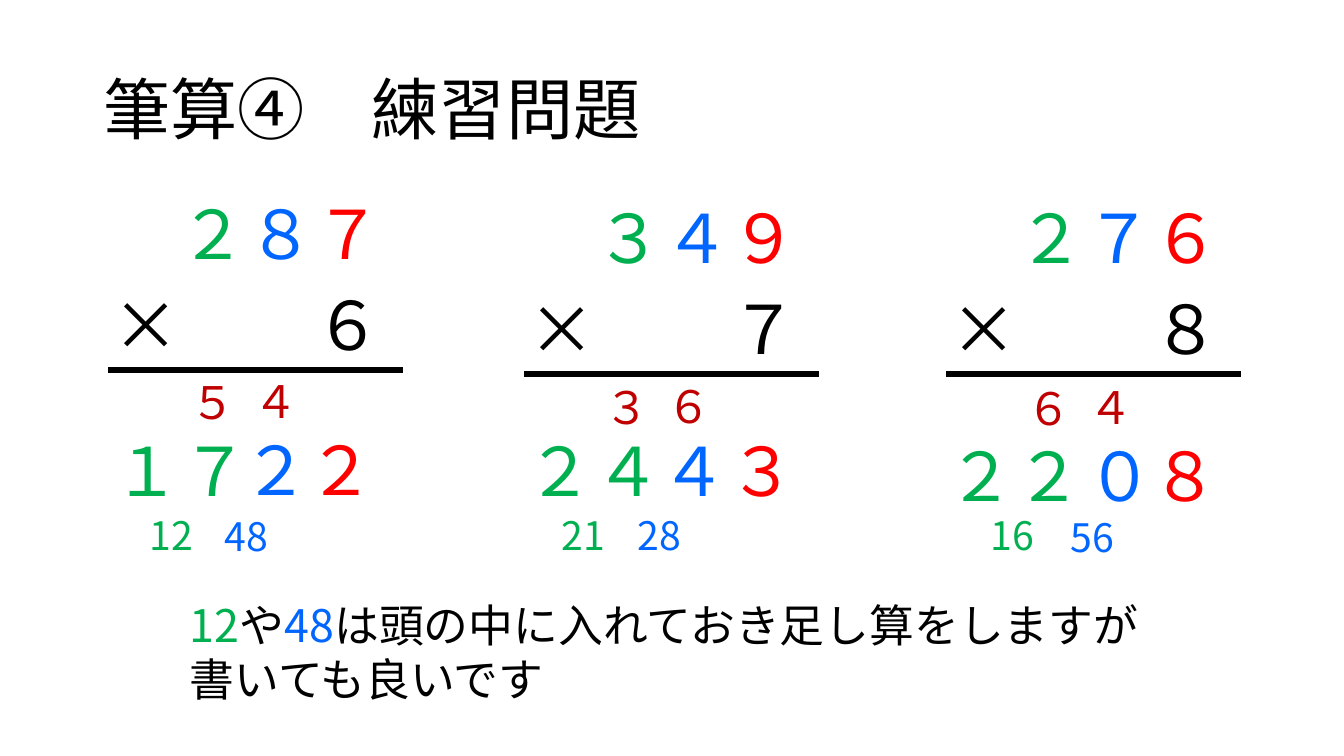
"""Build a slide of three worked long multiplications."""
from pptx import Presentation
from pptx import util as u
from pptx.dml.color import RGBColor
from pptx.enum import shapes, text
from pptx.oxml.ns import qn
from lxml import etree

FONT = "Noto Sans CJK JP"
BLACK, GREEN, BLUE, RED, DARK = "000000", "00B050", "0066FF", "FF0000", "C00000"
TITLE = "筆算④　練習問題"
NOTE = [("12", GREEN), ("や", BLACK), ("48", BLUE),
        ("は頭の中に入れておき足し算をしますが書いても良いです", BLACK)]
SUMS = [
    {"bar": (108, 370), "top": "２８７", "by": "６",
     "answer": [("１７", 104, 424), ("２", 233, 423), ("２", 298, 423)],
     "carry": [("５", 181, 370), ("４", 244, 369)],
     "hint": [("12", 140, 506), ("48", 215, 507)]},
    {"bar": (524, 374), "top": "３４９", "by": "７",
     "answer": [("２４", 517, 424), ("４", 651, 424), ("３", 719, 424)],
     "carry": [("３", 595, 375), ("６", 657, 374)],
     "hint": [("21", 552, 506), ("28", 628, 506)]},
    {"bar": (946, 374), "top": "２７６", "by": "８",
     "answer": [("２２", 938, 429), ("０", 1077, 429), ("８", 1142, 429)],
     "carry": [("６", 1017, 376), ("４", 1079, 375)],
     "hint": [("16", 981, 506), ("56", 1061, 508)]},
]
ROWS = {"answer": (48, 92, (157, 79, 80), (GREEN, BLUE, RED)),
        "carry": (32, 65, (65, 65), (DARK, DARK)),
        "hint": (28, 57, (79, 79), (GREEN, BLUE))}


def px(n):
    return u.Emu(round(n * 914400 / 100.8))


def paint(code):
    return RGBColor.from_string(code)


def write(frame, runs, size):
    for words, code in runs:
        run = frame.paragraphs[0].add_run()
        run.text = words
        font = run.font
        font.size, font.name = u.Pt(size), FONT
        font.color.rgb = paint(code)
        east = etree.SubElement(font._element, qn("a:ea"))
        east.set("typeface", FONT)


def label(slide, box, runs, size):
    frame = slide.shapes.add_textbox(*map(px, box)).text_frame
    frame.word_wrap = True
    frame.auto_size = text.MSO_AUTO_SIZE.SHAPE_TO_FIT_TEXT
    write(frame, runs, size)


def rule(slide, x, y, wide):
    line = slide.shapes.add_connector(
        shapes.MSO_CONNECTOR.STRAIGHT, px(x), px(y), px(x + wide), px(y))
    line.line.color.rgb = paint(BLACK)
    line.line.width = u.Pt(4.5)
    etree.SubElement(line._element.spPr, qn("a:effectLst"))


def head(slide):
    title = slide.shapes.title
    title.left, title.top, title.width, title.height = map(px, (93, 40, 1159, 146))
    frame = title.text_frame
    frame.auto_size = text.MSO_AUTO_SIZE.NONE
    frame.vertical_anchor = text.MSO_ANCHOR.MIDDLE
    para = frame.paragraphs[0]
    para.alignment, para.line_spacing = text.PP_ALIGN.LEFT, 0.9
    write(frame, [(TITLE, BLACK)], 48)


def work(slide, item):
    x, y = item["bar"]
    rule(slide, x, y, 295)
    label(slide, (x + 62, y - 183, 223, 92),
          zip(item["top"], (GREEN, BLUE, RED)), 48)
    label(slide, (x - 5, y - 92, 299, 92), [("×　　" + item["by"], BLACK)], 48)
    for kind, (size, high, wides, codes) in ROWS.items():
        for (words, left, top), wide, code in zip(item[kind], wides, codes):
            label(slide, (left, top, wide, high), [(words, code)], size)


def main():
    deck = Presentation()
    deck.slide_width, deck.slide_height = px(1344), px(756)
    slide = deck.slides.add_slide(deck.slide_layouts[5])
    head(slide)
    for item in SUMS:
        work(slide, item)
    label(slide, (180, 593, 1013, 119), NOTE, 32)
    deck.save("out.pptx")


if __name__ == "__main__":
    main()
